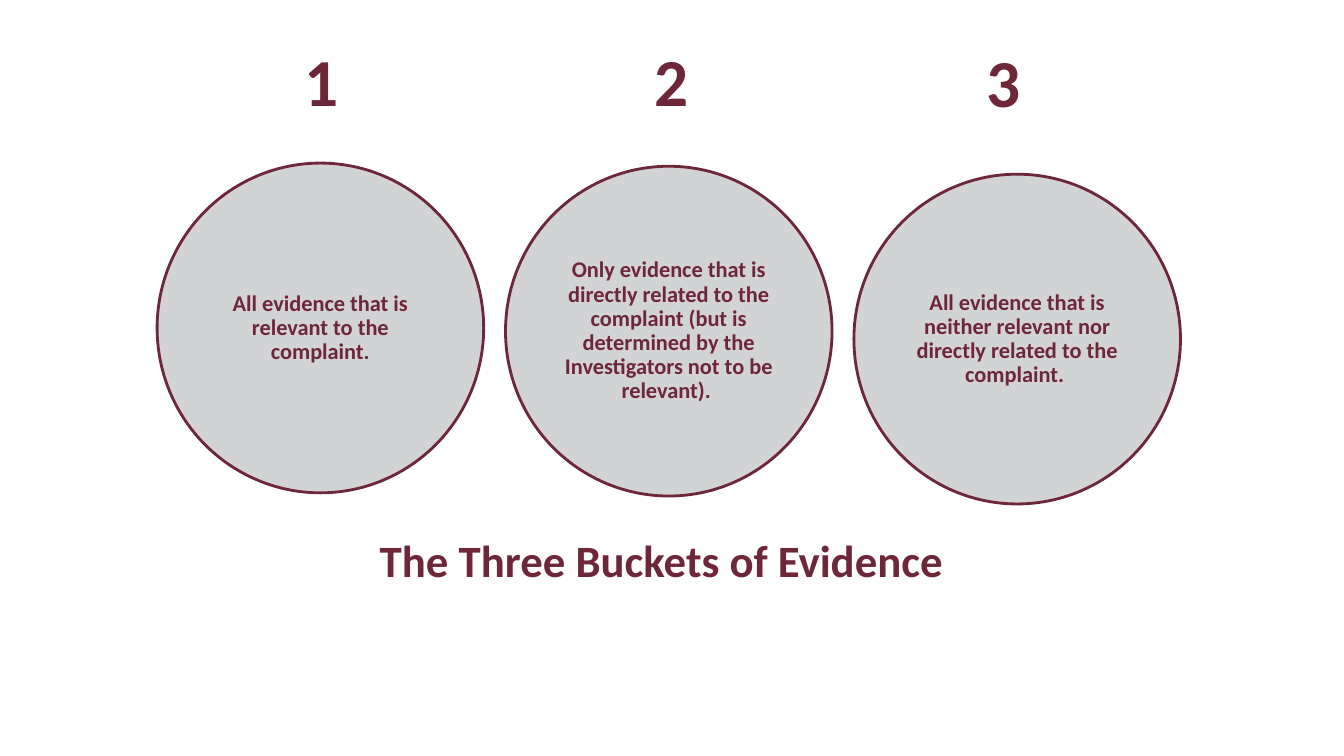
"""Builds the slide on the three buckets of evidence."""
from lxml import etree
from pptx import Presentation
from pptx.dml.color import RGBColor
from pptx.enum.shapes import MSO_SHAPE
from pptx.enum.text import MSO_ANCHOR, PP_ALIGN
from pptx.oxml.ns import qn
from pptx.util import Cm, Pt

OVAL = MSO_SHAPE.OVAL
CENTER = PP_ALIGN.CENTER
TOP, MIDDLE, BOTTOM = MSO_ANCHOR.TOP, MSO_ANCHOR.MIDDLE, MSO_ANCHOR.BOTTOM

COLORS = {"maroon": "6E2639", "gray": "A7A9AC"}
FONT = "Calibri"
TITLE = "The Three Buckets of Evidence "
BUCKETS = [
    {"text": "All evidence that is relevant to the complaint.",
     "top": 4.11, "number_center": 8.1, "number_top": 0.86},
    {"text": "Only evidence that is directly related to the complaint "
             "(but is determined by the Investigators not to be relevant). ",
     "top": 4.19, "number_center": 16.93, "number_top": 0.86},
    {"text": "All evidence that is neither relevant nor directly related "
             "to the complaint. ",
     "top": 4.39, "number_center": 25.29, "number_top": 0.89},
]
LEFT, STEP = 3.96, 8.78
CIRCLE_W, CIRCLE_H = 8.23, 8.31
NUMBER_W, NUMBER_H = 2.82, 2.31


def color(name):
    return RGBColor.from_string(COLORS[name])


def write(sp, text, size, anchor):
    tf = sp.text_frame
    tf.word_wrap = True
    tf.vertical_anchor = anchor
    p = tf.paragraphs[0]
    p.alignment = CENTER
    r = p.add_run()
    r.text = text
    r.font.name = FONT
    r.font.size = Pt(size)
    r.font.bold = True
    r.font.color.rgb = color("maroon")
    return tf


def add_text(s, box, text, size, anchor):
    write(s.shapes.add_textbox(*map(Cm, box)), text, size, anchor)


def add_circle(s, left, top, text):
    sp = s.shapes.add_shape(OVAL, *map(Cm, (left, top, CIRCLE_W, CIRCLE_H)))
    sp.shadow.inherit = False
    sp.fill.solid()
    sp.fill.fore_color.rgb = color("gray")
    fill = sp.fill._xPr.find(qn("a:solidFill"))
    etree.SubElement(fill[0], qn("a:alpha"), val="50000")
    sp.line.color.rgb = color("maroon")
    sp.line.width = Pt(2)
    tf = write(sp, text, 16, MIDDLE)
    tf.margin_left = tf.margin_right = Cm(0.18)
    tf.margin_top = tf.margin_bottom = Cm(0.18)
    tf.paragraphs[0].line_spacing = 0.9


def main():
    prs = Presentation()
    prs.slide_width, prs.slide_height = Cm(33.87), Cm(19.05)
    s = prs.slides.add_slide(prs.slide_layouts[6])
    for i, bucket in enumerate(BUCKETS):
        add_circle(s, LEFT + i * STEP, bucket["top"], bucket["text"])
        number_left = bucket["number_center"] - NUMBER_W / 2
        add_text(s, (number_left, bucket["number_top"], NUMBER_W, NUMBER_H),
                 str(i + 1), 48, TOP)
    add_text(s, (1.7, 13.34, 30.2, 1.57), TITLE, 32, BOTTOM)
    prs.save("out.pptx")


if __name__ == "__main__":
    main()
